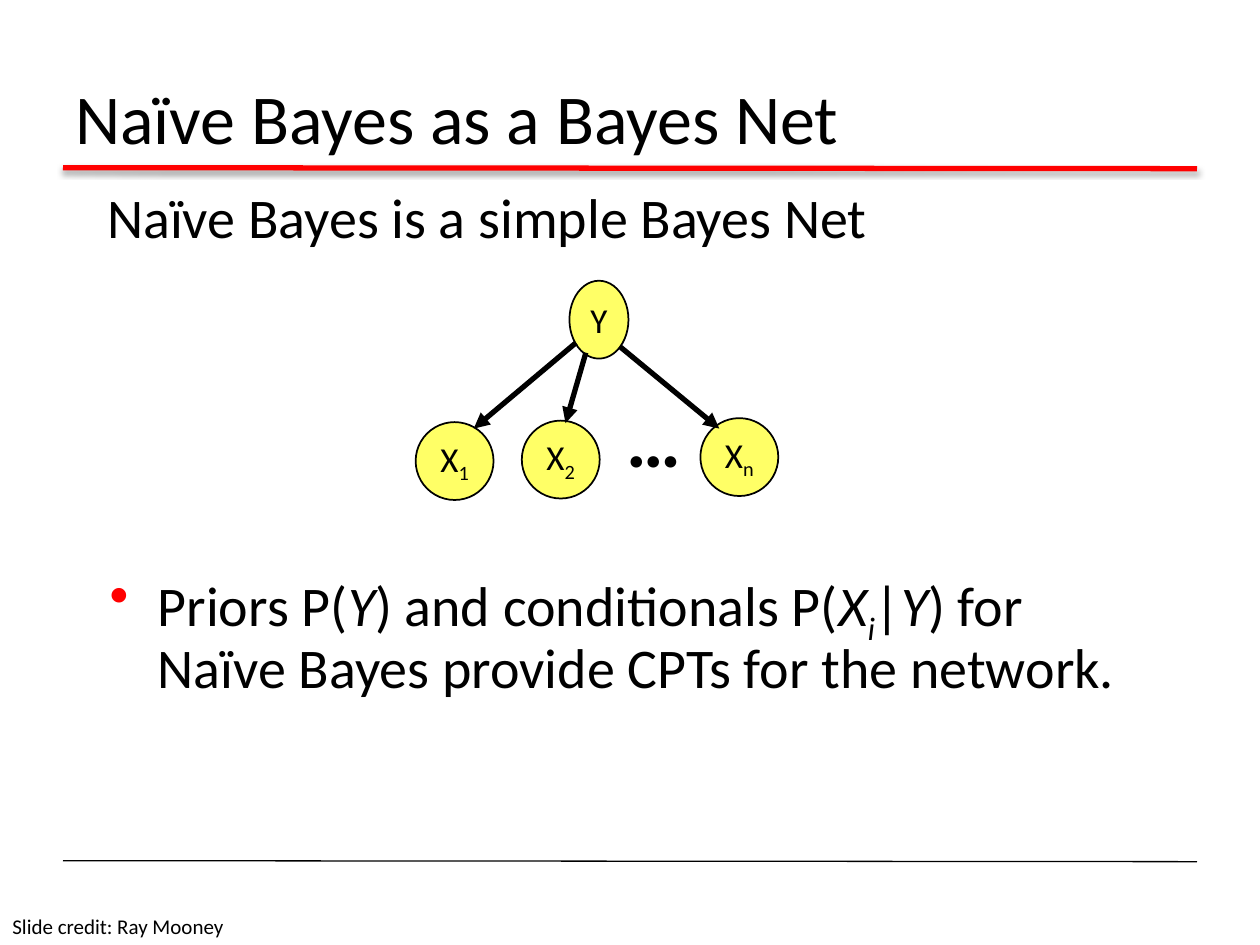
from pptx import Presentation
from pptx.dml.color import RGBColor
from pptx.enum.shapes import MSO_CONNECTOR as LINK, MSO_SHAPE as SHAPE
from pptx.enum.text import MSO_ANCHOR as ANCHOR, PP_ALIGN as ALIGN
from pptx.oxml import parse_xml
from pptx.oxml.ns import nsdecls, qn
from pptx.util import Cm, Pt

BLACK = RGBColor(0x00, 0x00, 0x00)
RED = RGBColor(0xFF, 0x00, 0x00)
YELLOW = RGBColor(0xFF, 0xFF, 0x66)
NS = nsdecls("a")
SHADOW = ('<a:outerShdw blurRad="39400" dist="22900" dir="5400000" rotWithShape="0">'
          '<a:srgbClr val="000000"><a:alpha val="35000"/></a:srgbClr></a:outerShdw>')

deck = Presentation()
deck.slide_width, deck.slide_height = Cm(25.4), Cm(19.05)
slide = deck.slides.add_slide(deck.slide_layouts[6])
shapes = slide.shapes


def write(shape, runs, size, bold=None, align=ALIGN.LEFT, anchor=ANCHOR.TOP,
          wrap=True, space=None, before=0, hang=0, bullet=None):
    frame = shape.text_frame
    frame.word_wrap = wrap
    frame.vertical_anchor = anchor
    para = frame.paragraphs[0]
    para.alignment = align
    para.line_spacing = space
    para.space_before = Pt(before)
    props = para._p.get_or_add_pPr()
    if hang:
        props.set("marL", str(Cm(hang)))
        props.set("indent", str(-Cm(hang)))
    if bullet:
        props.append(parse_xml(f'<a:buClr {NS}><a:srgbClr val="{RED}"/></a:buClr>'))
        props.append(parse_xml(f'<a:buChar {NS} char="{bullet}"/>'))
    for text, style in runs:
        run = para.add_run()
        run.text = text
        font = run.font
        font.name, font.size, font.bold = "Calibri", Pt(size), bold
        font.color.rgb = BLACK
        font.italic = "i" in style
        if "sub" in style:
            run._r.get_or_add_rPr().set("baseline", "-25000")


def draw(ends, color, width, effect="", arrow=False):
    link = shapes.add_connector(LINK.STRAIGHT, *map(Cm, ends))
    link.line.color.rgb = color
    link.line.width = Pt(width)
    props = link.element.spPr
    if arrow:
        props.find(qn("a:ln")).append(parse_xml(f'<a:tailEnd {NS} type="triangle"/>'))
    props.append(parse_xml(f"<a:effectLst {NS}>{effect}</a:effectLst>"))


draw((1.27, 3.38, 24.13, 3.4), RED, 3, effect=SHADOW)
draw((1.27, 17.35, 24.13, 17.37), BLACK, 0.75)

title = shapes.add_textbox(Cm(1.27), Cm(0.76), Cm(22.86), Cm(3.18))
write(title, [("Naïve Bayes as a Bayes Net", "")], 40, anchor=ANCHOR.MIDDLE)

intro = shapes.add_textbox(Cm(1.91), Cm(3.81), Cm(21.59), Cm(1.47))
write(intro, [("Naïve Bayes is a simple Bayes Net", "")], 32,
      space=0.8, before=6, hang=0.97)

nodes = [
    ("Y", "", 11.48, 5.66, 1.19),
    ("X", "1", 8.38, 8.51, 1.57),
    ("X", "2", 10.52, 8.48, 1.57),
    ("X", "n", 14.12, 8.43, 1.57),
]
for name, index, left, top, width in nodes:
    node = shapes.add_shape(SHAPE.OVAL, Cm(left), Cm(top), Cm(width), Cm(1.57))
    node.shadow.inherit = False
    node.fill.solid()
    node.fill.fore_color.rgb = YELLOW
    node.line.color.rgb = BLACK
    node.line.width = Pt(1)
    runs = [(name, "")] + ([(index, "sub")] if index else [])
    write(node, runs, 20, align=ALIGN.CENTER, anchor=ANCHOR.MIDDLE, wrap=False)

dots = shapes.add_textbox(Cm(12.37), Cm(7.75), Cm(1.63), Cm(2.13))
write(dots, [("…", "")], 44, bold=True, align=ALIGN.CENTER, wrap=False)

for ends in [(11.61, 6.91, 9.55, 8.64), (11.81, 7.11, 11.4, 8.53),
             (12.5, 6.99, 14.5, 8.64)]:
    draw(ends, BLACK, 3, arrow=True)

priors = shapes.add_textbox(Cm(1.96), Cm(11.4), Cm(21.59), Cm(1.47))
write(priors, [
    ("Priors P(", ""), ("Y", "i"), (") and conditionals P(", ""),
    ("X", "i"), ("i", "i sub"), ("|", ""), ("Y", "i"),
    (") for Naïve Bayes provide CPTs for the network.", ""),
], 32, space=0.9, before=6, hang=0.97, bullet="•")

credit = shapes.add_textbox(Cm(0), Cm(18.29), Cm(4.93), Cm(0.76))
write(credit, [("Slide credit: Ray Mooney", "")], 12, wrap=False)

deck.save("out.pptx")
